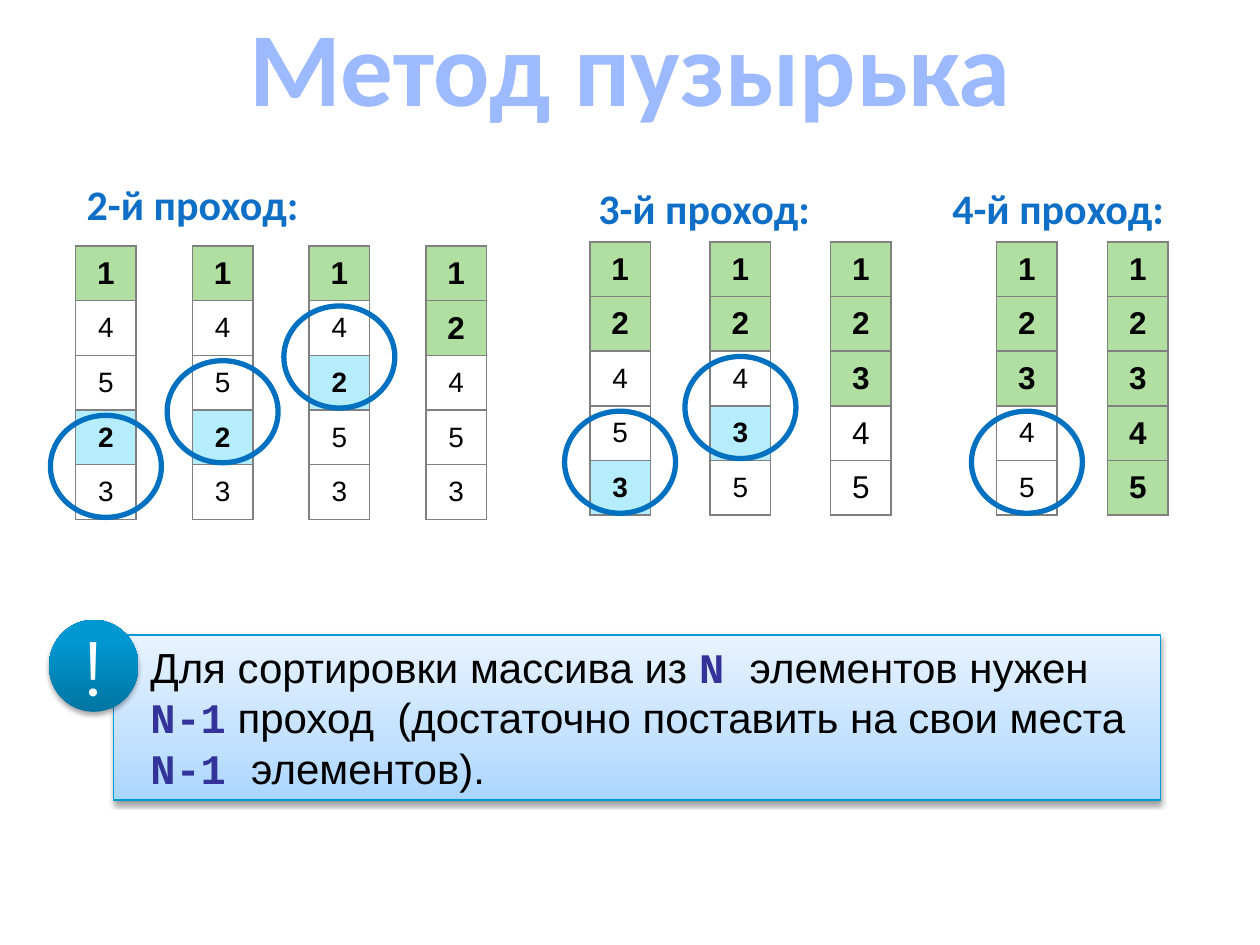
from lxml import etree
from pptx import Presentation
from pptx.dml.color import RGBColor
from pptx.enum.shapes import MSO_SHAPE
from pptx.enum.text import MSO_ANCHOR, MSO_AUTO_SIZE, PP_ALIGN
from pptx.oxml.ns import qn
from pptx.util import Pt

OVAL, RECTANGLE = MSO_SHAPE.OVAL, MSO_SHAPE.RECTANGLE
CENTER, LEFT = PP_ALIGN.CENTER, PP_ALIGN.LEFT
MIDDLE, TOP = MSO_ANCHOR.MIDDLE, MSO_ANCHOR.TOP
NO_AUTOFIT = MSO_AUTO_SIZE.NONE

CELL_WIDTH, CELL_HEIGHT = 34.6, 31.25
RING_WIDTH, RING_HEIGHT = 63.4, 58.3
SORTED_FILL, MOVING_FILL = "B0DFA1", "B5EDFD"

# heading, heading left and top, first column left, top, step,
# columns: values, sorted count, moving row, first ringed row, unsorted text size
PASSES = [
    ("2-й проход:", 42.5, 98.6, 43.2, 140.6, 66.7, [
        ("14523", 1, 3, 3, 16),
        ("14523", 1, 3, 2, 16),
        ("14253", 1, 2, 1, 16),
        ("12453", 2, None, None, 16),
    ]),
    ("3-й проход:", 334.8, 100.8, 337, 138.2, 68.8, [
        ("12453", 2, 4, 3, 16),
        ("12435", 2, 3, 2, 16),
        ("12345", 3, None, None, 18),
    ]),
    ("4-й проход:", 537.1, 100.8, 569.5, 138.2, 63.4, [
        ("12345", 3, None, 3, 16),
        ("12345", 5, None, None, 16),
    ]),
]


def color(value):
    """Return the colour for a hex string."""
    return RGBColor.from_string(value)


def format_run(run, size, font, hex_color, bold=False):
    """Set the font of a run."""
    run.font.size = Pt(size)
    run.font.name = font
    run.font.bold = bold
    run.font.color.rgb = color(hex_color)


def add_child(parent, tag, **attributes):
    """Append a drawing element with attributes."""
    child = etree.SubElement(parent, qn(tag))
    for name, value in attributes.items():
        child.set(name, str(value))
    return child


def add_color(parent, hex_color):
    """Append an RGB colour element."""
    return add_child(parent, "a:srgbClr", val=hex_color)


def set_borders(cell):
    """Draw a grey line on every side of a cell."""
    properties = cell._tc.get_or_add_tcPr()
    for position, side in enumerate(("a:lnL", "a:lnR", "a:lnT", "a:lnB")):
        line = etree.Element(qn(side), w=str(Pt(1)))
        add_color(add_child(line, "a:solidFill"), "808080")
        properties.insert(position, line)


def add_column(slide, left, top, values, sorted_count, moving, plain_size):
    """Add one state of the array as a one-column table."""
    frame = slide.shapes.add_table(
        len(values), 1, Pt(left), Pt(top), Pt(CELL_WIDTH), Pt(CELL_HEIGHT * len(values)))
    for index, value in enumerate(values):
        frame.table.rows[index].height = Pt(CELL_HEIGHT)
        cell = frame.table.cell(index, 0)
        is_sorted, is_moving = index < sorted_count, index == moving
        if is_sorted or is_moving:
            cell.fill.solid()
            cell.fill.fore_color.rgb = color(SORTED_FILL if is_sorted else MOVING_FILL)
        else:
            cell.fill.background()
        set_borders(cell)
        cell.vertical_anchor = MIDDLE
        cell.text_frame.text = value
        paragraph = cell.text_frame.paragraphs[0]
        paragraph.alignment = CENTER
        format_run(paragraph.runs[0], 18 if is_sorted else plain_size,
                   "Arial", "000000", is_sorted or is_moving)


def add_ring(slide, column_left, column_top, row):
    """Circle a pair of neighbouring cells."""
    ring = slide.shapes.add_shape(
        OVAL, Pt(column_left + (CELL_WIDTH - RING_WIDTH) / 2),
        Pt(column_top + row * CELL_HEIGHT + 3), Pt(RING_WIDTH), Pt(RING_HEIGHT))
    ring.shadow.inherit = False
    ring.fill.background()
    ring.line.color.rgb = color("0070C0")
    ring.line.width = Pt(3)


def add_heading(slide, text, left, top):
    """Add the heading of a pass."""
    box = slide.shapes.add_textbox(Pt(left), Pt(top), Pt(177), Pt(36))
    box.text_frame.text = text
    box.text_frame.vertical_anchor = MIDDLE
    format_run(box.text_frame.paragraphs[0].runs[0], 24, "Calibri", "0F6FC6", True)


def add_pass(slide, heading, heading_left, heading_top, left, top, step, columns):
    """Add a heading with its row of array states."""
    add_heading(slide, heading, heading_left, heading_top)
    for index, (values, sorted_count, moving, ringed, plain_size) in enumerate(columns):
        column_left = left + index * step
        add_column(slide, column_left, top, values, sorted_count, moving, plain_size)
        if ringed is not None:
            add_ring(slide, column_left, top, ringed)


def add_glossy_shape(slide, kind, left, top, width, height, stops, shadow_alpha):
    """Add a shape with an upward gradient and a soft shadow."""
    shape = slide.shapes.add_shape(kind, Pt(left), Pt(top), Pt(width), Pt(height))
    shape.fill.gradient()
    shape.fill.gradient_angle = 90
    properties = shape.element.spPr
    stop_list = properties.find(qn("a:gradFill")).find(qn("a:gsLst"))
    for stop in list(stop_list):
        stop_list.remove(stop)
    for position, hex_color in stops:
        add_color(add_child(stop_list, "a:gs", pos=position * 1000), hex_color)
    shape.line.fill.background()
    shape.shadow.inherit = False
    shadow = add_child(properties.find(qn("a:effectLst")), "a:outerShdw",
                       blurRad=Pt(3.1), dist=Pt(1.7), dir=90 * 60000, rotWithShape=0)
    add_child(add_color(shadow, "000000"), "a:alpha", val=shadow_alpha * 1000)
    return shape


def add_conclusion(slide):
    """Add the boxed conclusion."""
    box = add_glossy_shape(slide, RECTANGLE, 64.8, 362.9, 598.3, 94.3,
                           [(0, "ABD6FF"), (35, "C3E1FF"), (100, "E8F3FF")], 38)
    box.line.color.rgb = color("009AD4")
    box.line.width = Pt(0.75)
    box.text_frame.word_wrap = True
    box.text_frame.vertical_anchor = TOP
    paragraph = box.text_frame.paragraphs[0]
    paragraph.alignment = LEFT
    paragraph._p.get_or_add_pPr().set("marL", str(Pt(14)))
    parts = ["Для сортировки массива из ", "N ", "элементов нужен \v", "N-1",
             " проход  (достаточно поставить на свои места ", "N-1 ", "элементов)."]
    for index, text in enumerate(parts):
        run = paragraph.add_run()
        run.text = text.rstrip("\v")
        if index % 2:
            format_run(run, 24, "Courier New", "333399", True)
        else:
            format_run(run, 24, "Arial", "000000")
        if text.endswith("\v"):
            paragraph.add_line_break()


def add_badge(slide):
    """Add the round exclamation badge."""
    badge = add_glossy_shape(slide, OVAL, 28, 354.2, 51.1, 52.6,
                             [(0, "0075A2"), (80, "0098D2"), (100, "0099D3")], 35)
    badge.text_frame.text = "!"
    badge.text_frame.word_wrap = False
    badge.text_frame.vertical_anchor = MIDDLE
    paragraph = badge.text_frame.paragraphs[0]
    paragraph.alignment = CENTER
    format_run(paragraph.runs[0], 44, "Montserrat", "FFFFFF")


def set_title(slide, text):
    """Place and format the slide title."""
    title = slide.shapes.title
    title.left, title.top, title.width, title.height = Pt(0), Pt(6.5), Pt(720), Pt(61.2)
    title.text_frame.text = text
    title.text_frame.auto_size = NO_AUTOFIT
    title.text_frame.vertical_anchor = MIDDLE
    paragraph = title.text_frame.paragraphs[0]
    paragraph.alignment = CENTER
    format_run(paragraph.runs[0], 60, "Calibri", "9EBAFF", True)


def main():
    """Build and save the bubble sort slide."""
    presentation = Presentation()
    presentation.slide_width, presentation.slide_height = Pt(720), Pt(540)
    slide = presentation.slides.add_slide(presentation.slide_layouts[5])
    set_title(slide, "Метод пузырька")
    for sorting_pass in PASSES:
        add_pass(slide, *sorting_pass)
    add_conclusion(slide)
    add_badge(slide)
    presentation.save("out.pptx")


if __name__ == "__main__":
    main()
